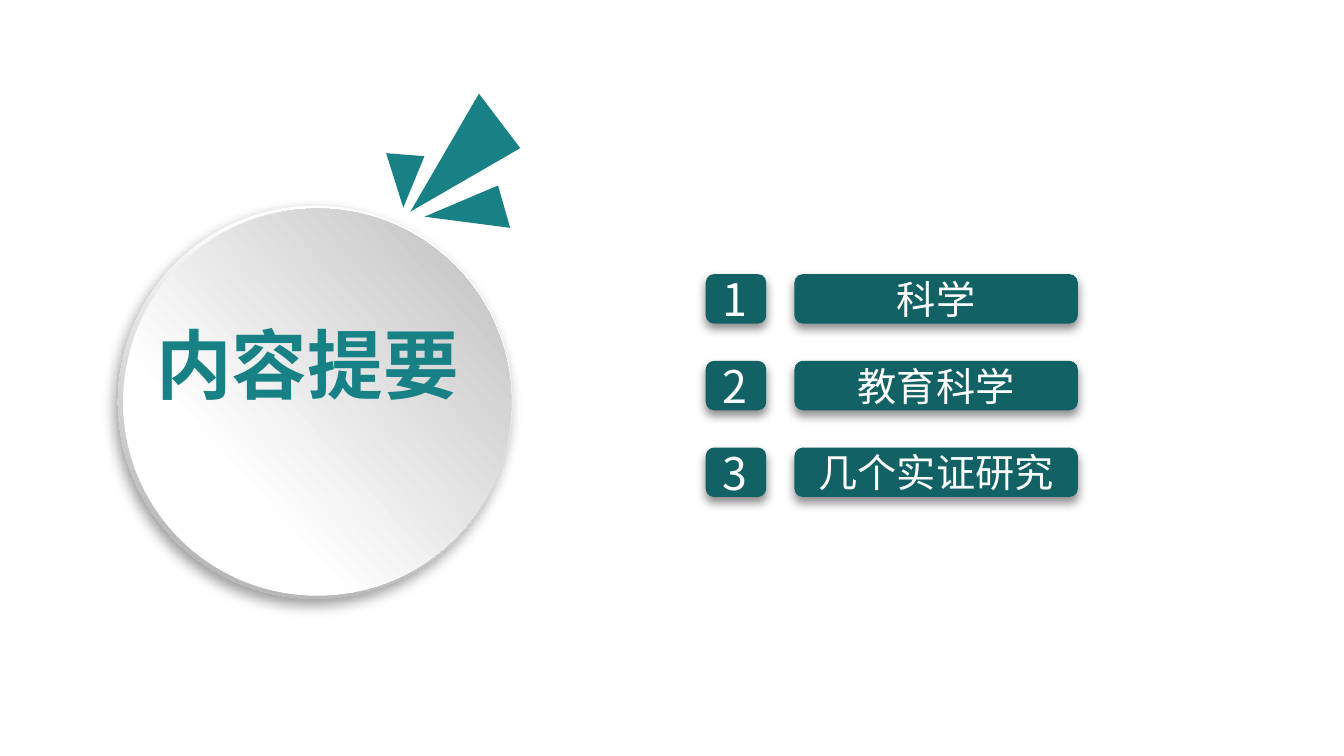
from lxml.etree import SubElement
from pptx import Presentation
from pptx.dml.color import RGBColor
from pptx.enum.shapes import MSO_SHAPE
from pptx.enum.text import MSO_ANCHOR, MSO_AUTO_SIZE, PP_ALIGN
from pptx.oxml.ns import qn
from pptx.util import Inches, Pt


def color(value):
    return RGBColor.from_string(value)


def set_values(target, values):
    for name, value in values.items():
        setattr(target, name, value)


class OutlineSlide:
    font_name = "Noto Sans CJK SC"
    teal = "188186"
    dark_teal = "126165"
    white = "FFFFFF"

    def __init__(self, presentation):
        self.slide = presentation.slides.add_slide(presentation.slide_layouts[5])

    def add_text(self, text_frame, text, size, fill, align, frame_values, bold=False):
        set_values(text_frame, frame_values)
        paragraph = text_frame.paragraphs[0]
        paragraph.alignment = align
        run = paragraph.add_run()
        run.text = text
        set_values(run.font, {"name": self.font_name, "size": Pt(size), "bold": bold})
        run.font.color.rgb = color(fill)
        SubElement(run.font._element, qn("a:ea"), typeface=self.font_name)

    def shadow(self, shape, opacity, blur, distance, direction):
        shape.shadow.inherit = False
        effects = shape._element.spPr.find(qn("a:effectLst"))
        outer = SubElement(
            effects, qn("a:outerShdw"), blurRad=str(Pt(blur)), dist=str(Pt(distance)),
            dir=str(direction * 60000), algn="ctr", rotWithShape="0")
        black = SubElement(outer, qn("a:srgbClr"), val="000000")
        SubElement(black, qn("a:alpha"), val=str(opacity * 1000))

    def disc(self, left, top, width, height, stops, angle):
        shape = self.slide.shapes.add_shape(
            MSO_SHAPE.OVAL, Inches(left), Inches(top), Inches(width), Inches(height))
        shape.shadow.inherit = False
        shape.line.fill.background()
        shape.fill.gradient()
        shape.fill.gradient_angle = angle
        for stop, (position, value) in zip(shape.fill.gradient_stops, stops):
            stop.position = position
            stop.color.rgb = color(value)
        return shape

    def ray(self, points):
        corners = [(Inches(x), Inches(y)) for x, y in points]
        builder = self.slide.shapes.build_freeform(*corners[0], scale=1.0)
        builder.add_line_segments(corners[1:], close=True)
        shape = builder.convert_to_shape()
        shape.shadow.inherit = False
        shape.fill.solid()
        shape.fill.fore_color.rgb = color(self.teal)
        shape.line.fill.background()

    def title(self, text, left, top, width, height):
        title = self.slide.shapes.title
        set_values(title, {"left": Inches(left), "top": Inches(top),
                           "width": Inches(width), "height": Inches(height)})
        self.slide.shapes._spTree.append(title._element)
        self.add_text(title.text_frame, text, 54, self.teal, PP_ALIGN.CENTER, {
            "word_wrap": True, "vertical_anchor": MSO_ANCHOR.TOP,
            "auto_size": MSO_AUTO_SIZE.SHAPE_TO_FIT_TEXT}, bold=True)

    def plate(self, group, left, top, width):
        shape = group.shapes.add_shape(
            MSO_SHAPE.ROUNDED_RECTANGLE, Inches(left), Inches(top), Inches(width), Inches(0.49))
        shape.fill.solid()
        shape.fill.fore_color.rgb = color(self.dark_teal)
        shape.line.fill.background()
        self.shadow(shape, 46, 7, 4, 90)
        return shape

    def topic(self, number, text, top):
        group = self.slide.shapes.add_group_shape()
        self.plate(group, 7, top, 0.6)
        number_box = group.shapes.add_textbox(
            Inches(7.07), Inches(top - 0.07), Inches(0.46), Inches(0.64))
        self.add_text(number_box.text_frame, str(number), 32, self.white, PP_ALIGN.LEFT, {
            "word_wrap": False, "auto_size": MSO_AUTO_SIZE.SHAPE_TO_FIT_TEXT})
        bar = self.plate(group, 7.88, top, 2.81)
        self.add_text(bar.text_frame, text, 28, self.white, PP_ALIGN.CENTER, {
            "word_wrap": True, "vertical_anchor": MSO_ANCHOR.MIDDLE})


def main():
    presentation = Presentation()
    set_values(presentation, {"slide_width": Inches(13.33), "slide_height": Inches(7.5)})
    outline = OutlineSlide(presentation)

    rim = outline.disc(1.17, 2.04, 3.91, 3.9, [(0.17, "FFFFFF"), (0.88, "B8B8B8")], 253)
    outline.shadow(rim, 39, 10, 5, 123)
    outline.disc(1.22, 2.07, 3.85, 3.84, [(0.29, "FFFFFF"), (0.98, "BFBFBF")], 42)

    rays = [
        [(4.07, 2.1), (4.75, 0.93), (5.16, 1.47)],
        [(4.21, 2.15), (4.94, 1.84), (5.06, 2.26)],
        [(4, 2.06), (3.83, 1.52), (4.21, 1.55)],
    ]
    for points in rays:
        outline.ray(points)

    outline.title("内容提要", 1.42, 3.1, 3.26, 1.01)
    for index, text in enumerate(["科学", "教育科学", "几个实证研究"]):
        outline.topic(index + 1, text, 2.72 + 0.86 * index)

    presentation.save("out.pptx")


if __name__ == "__main__":
    main()
